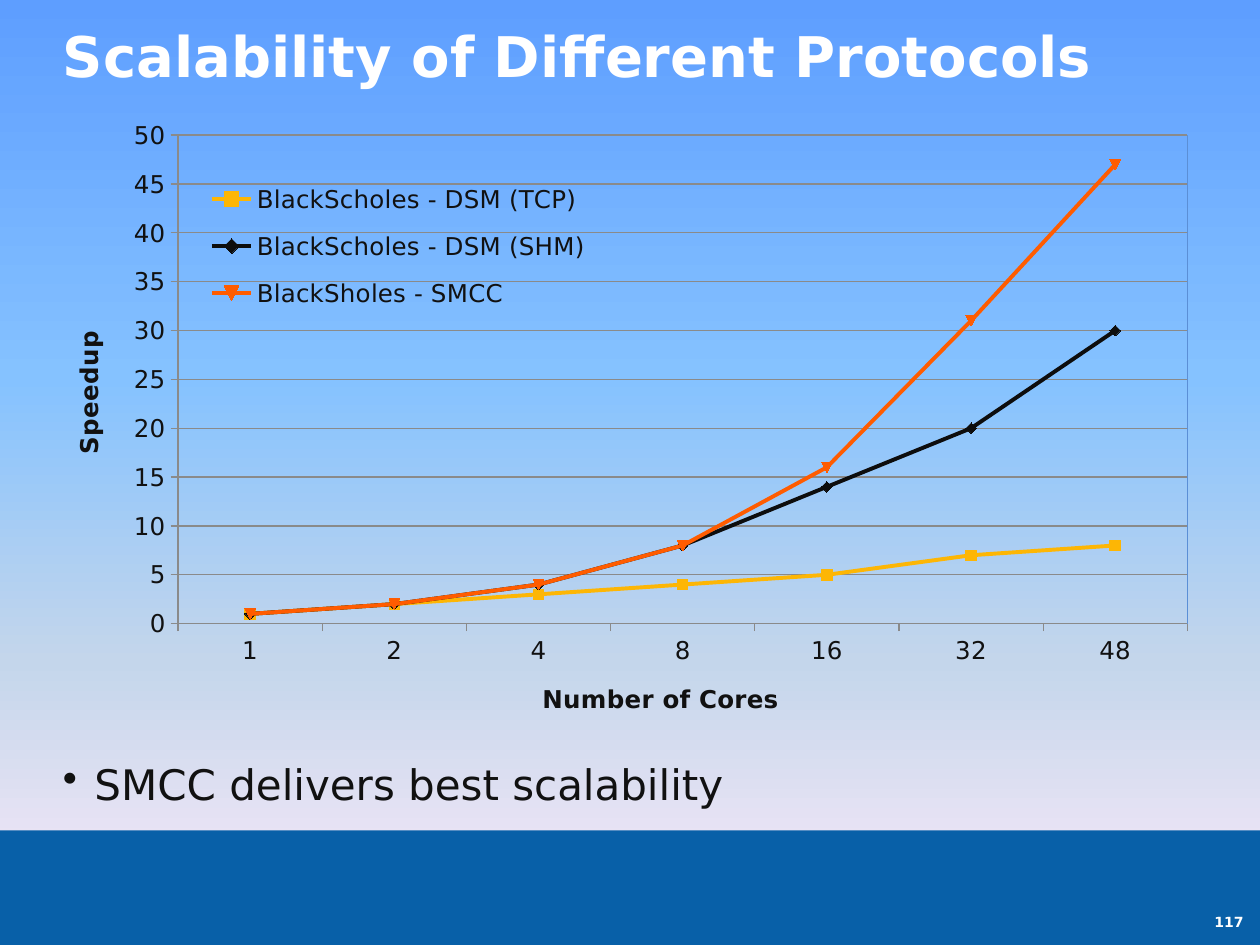
from dataclasses import dataclass

from lxml.etree import SubElement as Sub
from pptx import Presentation
from pptx.chart.data import CategoryChartData as Data
from pptx.dml.color import RGBColor as Rgb
from pptx.enum.chart import XL_CHART_TYPE as Kind
from pptx.enum.chart import XL_LEGEND_POSITION as Side
from pptx.enum.chart import XL_MARKER_STYLE as Mark
from pptx.enum.chart import XL_TICK_MARK as Tick
from pptx.enum.shapes import MSO_SHAPE as Form
from pptx.enum.text import PP_ALIGN as Align
from pptx.oxml import parse_xml
from pptx.oxml.ns import nsdecls, qn
from pptx.util import Pt

FONT = "DejaVu Sans"
INK = {"text": "111111", "white": "FFFFFF", "bar": "0860A8", "grid": "8A8A8A",
       "frame": "5B8FD6", "tcp": "FDB605", "shm": "0D0D0D", "smcc": "FF5C00"}
SKY = {0: "5E9EFF", 40: "85C2FF", 70: "C4D6EB", 100: "FFEBFA"}


@dataclass
class Box:
    x: float
    y: float
    w: float
    h: float

    def place(self) -> tuple:
        return Pt(self.x), Pt(self.y), Pt(self.w), Pt(self.h)


@dataclass
class Line:
    name: str
    ink: str
    vals: tuple


CORES = ("1", "2", "4", "8", "16", "32", "48")
LINES = (
    Line("BlackScholes - DSM (TCP)", "tcp", (1, 2, 3, 4, 5, 7, 8)),
    Line("BlackScholes - DSM (SHM)", "shm", (1, 2, 4, 8, 14, 20, 30)),
    Line("BlackSholes - SMCC", "smcc", (1, 2, 4, 8, 16, 31, 47)),
)


def tint(ink: str) -> Rgb:
    return Rgb.from_string(INK[ink])


def style(font, size: float, ink: str = "text", bold: bool = False) -> None:
    font.name, font.size, font.bold = FONT, Pt(size), bold
    font.color.rgb = tint(ink)


def write(slide, box: Box, text: str, *, size: float, ink: str = "text",
          bold: bool = False, align=Align.LEFT, gap: float = 1,
          dot: bool = False) -> None:
    frame = slide.shapes.add_textbox(*box.place()).text_frame
    frame.word_wrap = True
    frame.margin_left = frame.margin_right = 0
    frame.margin_top = frame.margin_bottom = 0
    para = frame.paragraphs[0]
    para.alignment, para.line_spacing = align, gap
    if dot:
        props = para._p.get_or_add_pPr()
        props.set("marL", str(Pt(18)))
        props.set("indent", str(-Pt(18)))
        Sub(props, qn("a:buChar")).set("char", "•")
    run = para.add_run()
    run.text = text
    style(run.font, size, ink, bold)


def paint(slide) -> None:
    fill = slide.background.fill
    fill.gradient()
    grad = slide._element.find(".//" + qn("a:gradFill"))
    stops = "".join(f'<a:gs pos="{pos * 1000}"><a:srgbClr val="{ink}"/></a:gs>'
                    for pos, ink in SKY.items())
    old = grad.find(qn("a:gsLst"))
    grad.replace(old, parse_xml(f'<a:gsLst {nsdecls("a")}>{stops}</a:gsLst>'))
    grad.find(qn("a:lin")).set("ang", "5400000")


def lay(node, slot: int, inner: bool, **parts: float) -> None:
    """Set a manual layout, in shares of the chart's size."""
    for old in node.findall(qn("c:layout")):
        node.remove(old)
    items = '<c:layoutTarget val="inner"/>' if inner else ""
    items += '<c:xMode val="edge"/><c:yMode val="edge"/>'
    items += "".join(f'<c:{key} val="{val}"/>' for key, val in parts.items())
    node.insert(slot, parse_xml(
        f'<c:layout {nsdecls("c")}><c:manualLayout>{items}'
        '</c:manualLayout></c:layout>'))


def dress(axis, title: str) -> None:
    axis.has_title = True
    frame = axis.axis_title.text_frame
    frame.text = title
    style(frame.paragraphs[0].runs[0].font, 14, bold=True)
    style(axis.tick_labels.font, 14)
    axis.major_tick_mark, axis.minor_tick_mark = Tick.OUTSIDE, Tick.NONE
    axis.format.line.color.rgb = tint("grid")
    axis.format.line.width = Pt(0.75)


def plot(slide, box: Box) -> None:
    data = Data()
    data.categories = CORES
    for line in LINES:
        data.add_series(line.name, line.vals)
    chart = slide.shapes.add_chart(Kind.LINE_MARKERS, *box.place(), data).chart
    chart.has_title = False
    style(chart.font, 10)

    # Axes and grid
    cat, val = chart.category_axis, chart.value_axis
    dress(cat, "Number of Cores")
    dress(val, "Speedup")
    val.minimum_scale, val.maximum_scale, val.major_unit = 0, 50, 5
    val.has_major_gridlines = True
    grid = val.major_gridlines.format.line
    grid.color.rgb, grid.width = tint("grid"), Pt(0.75)

    # Plot frame
    area = chart._chartSpace.find(".//" + qn("c:plotArea"))
    lay(area, 0, True, x=0.11, y=0.02, w=0.87, h=0.77)
    area.append(parse_xml(
        f'<c:spPr {nsdecls("c", "a")}><a:noFill/><a:ln w="{Pt(0.75)}">'
        f'<a:solidFill><a:srgbClr val="{INK["frame"]}"/></a:solidFill>'
        '</a:ln></c:spPr>'))

    # Lines and markers
    chart.plots[0].vary_by_categories = False
    for line, part in zip(LINES, chart.plots[0].series):
        part.smooth = False
        part.format.line.color.rgb = tint(line.ink)
        part.format.line.width = Pt(2.25)
        mark = part.marker
        mark.style, mark.size = Mark.AUTOMATIC, 6
        mark.format.fill.solid()
        mark.format.fill.fore_color.rgb = tint(line.ink)
        mark.format.line.color.rgb = tint(line.ink)

    # Legend over the plot
    chart.has_legend = True
    key = chart.legend
    key.position, key.include_in_layout = Side.RIGHT, True
    style(key.font, 14)
    lay(key._element, 1, False, x=0.12, y=0.07, w=0.36, h=0.25)


def main() -> None:
    deck = Presentation()
    deck.slide_width, deck.slide_height = Pt(720), Pt(540)
    slide = deck.slides.add_slide(deck.slide_layouts[6])
    paint(slide)

    # Footer bar
    bar = slide.shapes.add_shape(Form.RECTANGLE, *Box(0, 474.5, 720, 65.5).place())
    bar.shadow.inherit = False
    bar.fill.solid()
    bar.fill.fore_color.rgb = tint("bar")
    bar.line.fill.background()

    # Title, page number, chart and bullet
    write(slide, Box(36, 12.25, 648.75, 70), "Scalability of Different Protocols",
          size=32, ink="white", bold=True)
    write(slide, Box(686, 524, 32.5, 16), "117", size=8, ink="white", bold=True,
          align=Align.CENTER, gap=0.8)
    plot(slide, Box(28.8, 69, 663, 363.6))
    write(slide, Box(36, 433.5, 648.75, 38), "SMCC delivers best scalability",
          size=24, dot=True)
    deck.save("out.pptx")


if __name__ == "__main__":
    main()
